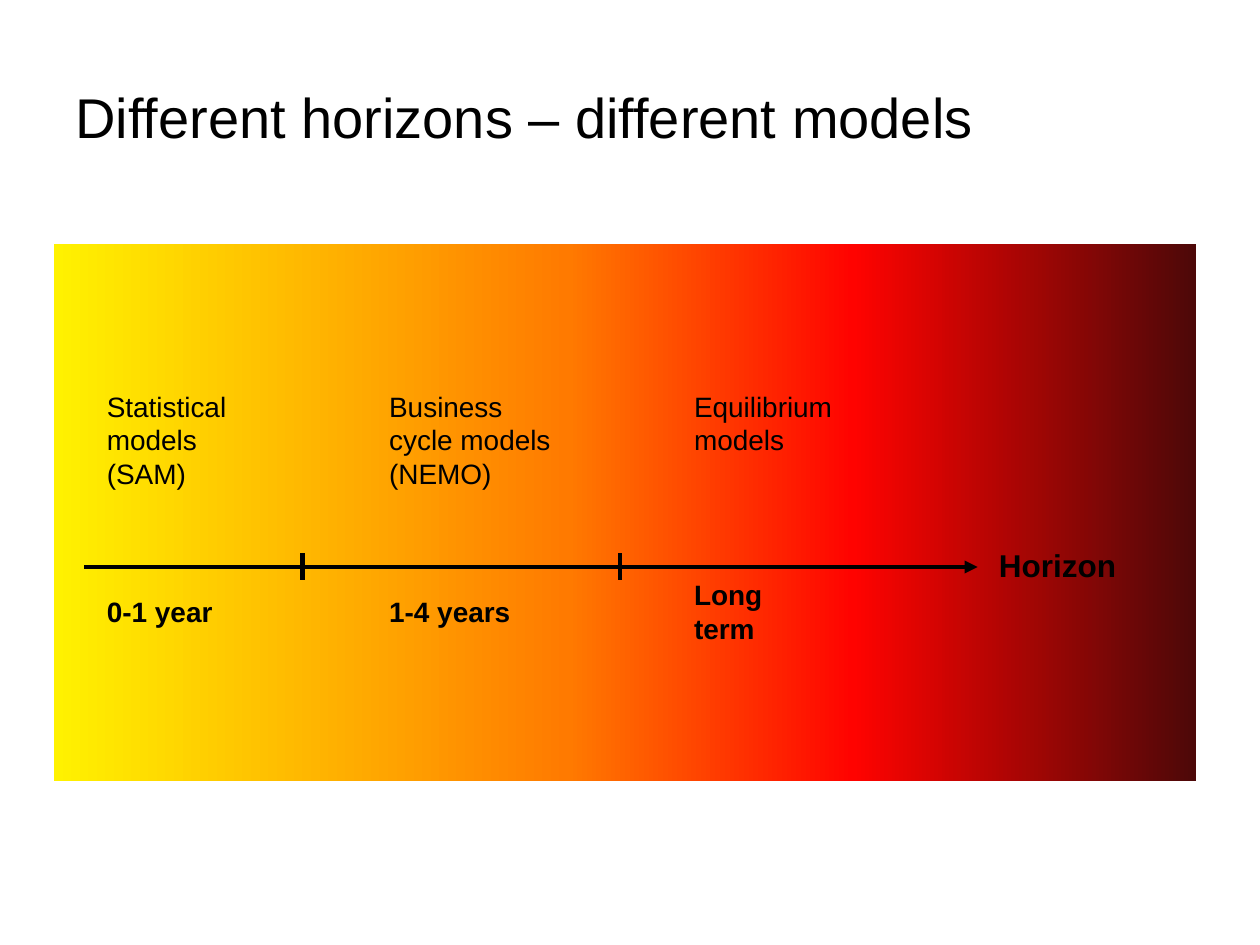
from copy import deepcopy

from lxml import etree
from pptx import Presentation
from pptx.dml.color import RGBColor
from pptx.enum import shapes, text
from pptx.oxml import ns
from pptx.util import Inches, Pt

COLORS = {"text": "000000", "yellow": "FFF200", "orange": "FF7A00",
          "red": "FF0300", "maroon": "4D0808"}
FONT = "Arial"
GRADIENT = [(0, "yellow"), (0.45, "orange"), (0.7, "red"), (1, "maroon")]

# Left offset in the panel, models and box width, period and box width
HORIZONS = [
    (0.32, ["Statistical models (SAM)"], 1.34, "0-1 year", 1.89),
    (2.56, ["Business cycle models", "(NEMO)"], 1.65, "1-4 years", 2.09),
    (4.98, ["Equilibrium models"], 1.88, "Long term", 1.18),
]


def rgb(name):
    return RGBColor.from_string(COLORS[name])


def add_text(s, lines, x, y, w, h, size, bold=False, anchor=text.MSO_ANCHOR.MIDDLE):
    tf = s.shapes.add_textbox(Inches(x), Inches(y), Inches(w), Inches(h)).text_frame
    tf.word_wrap = True
    tf.vertical_anchor = anchor
    tf.text = "\n".join(lines)
    for p in tf.paragraphs:
        p.font.name = FONT
        p.font.size = Pt(size)
        p.font.bold = bold
        p.font.color.rgb = rgb("text")


def add_line(s, x1, y1, x2, y2, arrow=False):
    line = s.shapes.add_connector(shapes.MSO_CONNECTOR.STRAIGHT,
                                  Inches(x1), Inches(y1), Inches(x2), Inches(y2))
    line.line.color.rgb = rgb("text")
    line.line.width = Pt(2.5)
    if arrow:
        etree.SubElement(line.line._get_or_add_ln(), ns.qn("a:tailEnd"), type="triangle")
    etree.SubElement(line._element.spPr, ns.qn("a:effectLst"))


def add_panel(s, x, y, w, h):
    sp = s.shapes.add_shape(shapes.MSO_SHAPE.RECTANGLE,
                            Inches(x), Inches(y), Inches(w), Inches(h))
    sp.shadow.inherit = False
    sp.line.fill.background()
    sp.fill.gradient()
    sp.fill.gradient_angle = 0
    # The default gradient has two stops; extend it to four
    stops = sp._element.spPr.find(".//" + ns.qn("a:gsLst"))
    while len(stops) < len(GRADIENT):
        stops.append(deepcopy(stops[0]))
    for stop, (position, color) in zip(sp.fill.gradient_stops, GRADIENT):
        stop.position = position
        stop.color.rgb = rgb(color)


def add_timeline(s, x, y, w, h):
    add_panel(s, x, y, w, h)
    axis_y = y + 2.56

    # Models above the axis, periods below
    for dx, models, model_w, period, period_w in HORIZONS:
        add_text(s, models, x + dx, y + 1.1, model_w, 0.91, 16,
                 anchor=text.MSO_ANCHOR.TOP)
        add_text(s, [period], x + dx, axis_y + 0.03, period_w, 0.64, 16, bold=True)

    # Axis with its ticks and label
    add_line(s, x + 0.24, axis_y, x + 7.33, axis_y, arrow=True)
    for dx in (1.97, 4.49):
        add_line(s, x + dx, axis_y - 0.11, x + dx, axis_y + 0.1)
    add_text(s, ["Horizon"], x + 7.4, axis_y - 0.22, 1.42, 0.4, 18, bold=True)


def main():
    prs = Presentation()
    prs.slide_width, prs.slide_height = Inches(10), Inches(7.5)
    s = prs.slides.add_slide(prs.slide_layouts[6])
    add_text(s, ["Different horizons – different models"], 0.5, 0.3, 9, 1.25, 32)
    add_timeline(s, 0.43, 1.94, 9.06, 4.26)
    prs.save("out.pptx")


if __name__ == "__main__":
    main()
